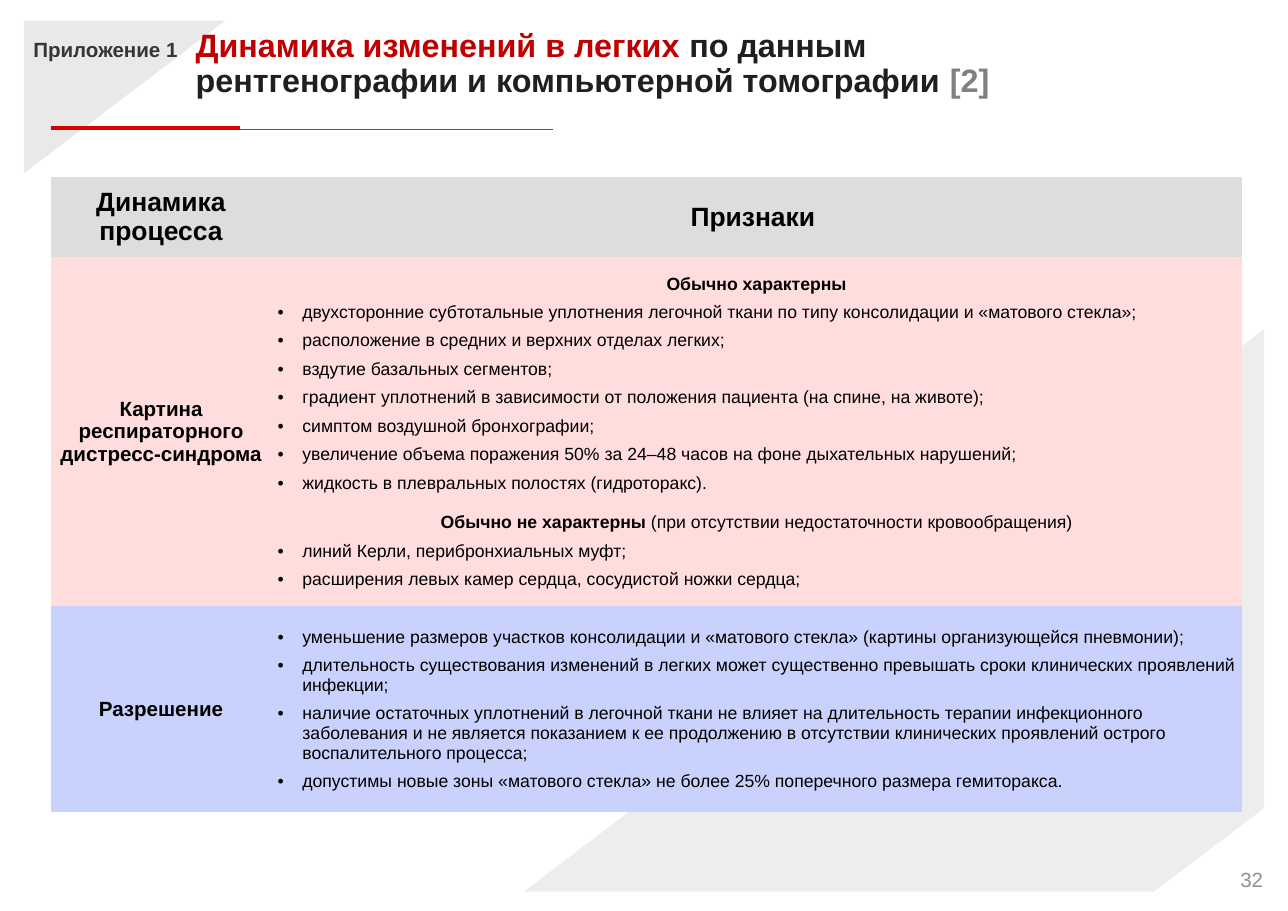
from lxml import etree
from pptx import Presentation
from pptx.dml.color import RGBColor
from pptx.enum.shapes import MSO_CONNECTOR, MSO_SHAPE
from pptx.enum.text import MSO_ANCHOR, PP_ALIGN
from pptx.oxml.ns import qn
from pptx.util import Inches, Pt

LEFT, CENTER, RIGHT = PP_ALIGN.LEFT, PP_ALIGN.CENTER, PP_ALIGN.RIGHT
MIDDLE = MSO_ANCHOR.MIDDLE
TRIANGLE = MSO_SHAPE.RIGHT_TRIANGLE
STRAIGHT = MSO_CONNECTOR.STRAIGHT
FONT = "Arial"
NO_GRID_STYLE = "{2D5ABB26-0587-4C30-8999-92F81FD0307C}"
# A4 landscape at 150 dots per inch, one point per dot
SLIDE_WIDTH, SLIDE_HEIGHT = Pt(1754), Pt(1241)

COLORS = {
    "white": "FFFFFF", "corner": "E9E9E9", "wedge": "EDEDED",
    "rule": "575757", "accent": "D30102", "number": "8F8F8F",
    "label": "353535", "title": "1F1F1F", "title_red": "C00000",
    "reference": "808080", "black": "000000",
    "header": "DDDDDD", "distress": "FFDDDD", "resolution": "C9D2FD",
}

# left, top, width, height, rotation, colour
TRIANGLES = [
    (11.59, 4.55, 10.64, 14, 270, "wedge"),
    (0.91, -0.07, 2.89, 3.81, 90, "corner"),
    (21.77, 14.6, 2.23, 2.94, 270, "white"),
]
# right end, y, width in points, colour
RULES_LEFT = 0.96
RULES = [(10.46, 2.45, 1.5, "rule"), (4.53, 2.42, 5.75, "accent")]

APPENDIX = "Приложение 1"
PAGE_NUMBER = "32"
TITLE_LINES = [
    [("Динамика изменений в легких ", "title_red"), ("по данным ", "title")],
    [("рентгенографии и компьютерной томографии ", "title"), ("[2]", "reference")],
]

HEADINGS = ["Динамика процесса", "Признаки "]
# Each stage: name, colour, groups of (bold heading, plain ending, signs)
STAGES = [
    ("Картина респираторного дистресс-синдрома", "distress", [
        ("Обычно характерны", "", [
            "двухсторонние субтотальные уплотнения легочной ткани по типу консолидации и «матового стекла»;",
            "расположение в средних и верхних отделах легких;",
            "вздутие базальных сегментов;",
            "градиент уплотнений в зависимости от положения пациента (на спине, на животе);",
            "симптом воздушной бронхографии;",
            "увеличение объема поражения 50% за 24–48 часов на фоне дыхательных нарушений;",
            "жидкость в плевральных полостях (гидроторакс).",
        ]),
        ("Обычно не характерны", " (при отсутствии недостаточности кровообращения)", [
            "линий Керли, перибронхиальных муфт;",
            "расширения левых камер сердца, сосудистой ножки сердца;",
        ]),
    ]),
    ("Разрешение", "resolution", [
        ("", "", [
            "уменьшение размеров участков консолидации и «матового стекла» (картины организующейся пневмонии);",
            "длительность существования изменений в легких может существенно превышать сроки клинических проявлений инфекции;",
            "наличие остаточных уплотнений в легочной ткани не влияет на длительность терапии инфекционного заболевания и не является показанием к ее продолжению в отсутствии клинических проявлений острого воспалительного процесса;",
            "допустимы новые зоны «матового стекла» не более 25% поперечного размера гемиторакса.",
        ]),
    ]),
]
TABLE_LEFT, TABLE_TOP = 0.96, 3.34
COLUMN_WIDTHS = [4.17, 18.36]
ROW_HEIGHTS = [1.53, 6.6, 3.9]
BULLET_INDENT = 0.47
SIGN_GAP, GROUP_GAP = 12, 27.5


def rgb(color):
    return RGBColor.from_string(COLORS[color])


def add_run(paragraph, text, size, color="black", bold=False):
    run = paragraph.add_run()
    run.text = text
    run.font.name, run.font.size, run.font.bold = FONT, Pt(size), bold
    run.font.color.rgb = rgb(color)


def add_text_area(slide, left, top, width, height):
    """Add a text box without margins and return its first paragraph."""
    frame = slide.shapes.add_textbox(*map(Inches, (left, top, width, height))).text_frame
    frame.word_wrap = True
    frame.margin_left = frame.margin_right = frame.margin_top = frame.margin_bottom = 0
    return frame.paragraphs[0]


def add_bullet(paragraph):
    properties = paragraph._p.get_or_add_pPr()
    properties.set("marL", str(Inches(BULLET_INDENT)))
    properties.set("indent", str(-Inches(BULLET_INDENT)))
    etree.SubElement(properties, qn("a:buFont")).set("typeface", FONT)
    etree.SubElement(properties, qn("a:buChar")).set("char", "•")


def prepare_cell(cell, color):
    cell.fill.solid()
    cell.fill.fore_color.rgb = rgb(color)
    cell.vertical_anchor = MIDDLE
    cell.margin_left = cell.margin_right = Inches(0.12)
    cell.margin_top = cell.margin_bottom = Inches(0.16)


def fill_label(cell, text, size, color):
    prepare_cell(cell, color)
    paragraph = cell.text_frame.paragraphs[0]
    paragraph.alignment = CENTER
    add_run(paragraph, text, size, bold=True)


def fill_signs(cell, groups, color):
    prepare_cell(cell, color)
    frame = cell.text_frame
    lines = []
    for heading, ending, signs in groups:
        if heading:
            lines.append((heading, ending, GROUP_GAP))
        lines += [("", sign, SIGN_GAP) for sign in signs]
    for index, (heading, plain, gap) in enumerate(lines):
        paragraph = frame.add_paragraph() if index else frame.paragraphs[0]
        paragraph.space_before = Pt(gap if index else 0)
        paragraph.alignment = CENTER if heading else LEFT
        if heading:
            add_run(paragraph, heading, 24, bold=True)
        else:
            add_bullet(paragraph)
        if plain:
            add_run(paragraph, plain, 24)


def add_decor(slide):
    for left, top, width, height, rotation, color in TRIANGLES:
        triangle = slide.shapes.add_shape(TRIANGLE, *map(Inches, (left, top, width, height)))
        triangle.rotation = rotation
        triangle.shadow.inherit = False
        triangle.fill.solid()
        triangle.fill.fore_color.rgb = rgb(color)
        triangle.line.fill.background()
    for right, y, weight, color in RULES:
        rule = slide.shapes.add_connector(STRAIGHT, *map(Inches, (RULES_LEFT, y, right, y)))
        rule.line.color.rgb = rgb(color)
        rule.line.width = Pt(weight)
        etree.SubElement(rule._element.spPr, qn("a:effectLst"))


def add_signs_table(slide):
    table = slide.shapes.add_table(
        len(ROW_HEIGHTS), len(COLUMN_WIDTHS), Inches(TABLE_LEFT), Inches(TABLE_TOP),
        Inches(sum(COLUMN_WIDTHS)), Inches(sum(ROW_HEIGHTS))).table
    table._tbl.tblPr.find(qn("a:tableStyleId")).text = NO_GRID_STYLE
    table.horz_banding = False
    for column, width in zip(table.columns, COLUMN_WIDTHS):
        column.width = Inches(width)
    for row, height in zip(table.rows, ROW_HEIGHTS):
        row.height = Inches(height)
    for column, heading in enumerate(HEADINGS):
        fill_label(table.cell(0, column), heading, 36, "header")
    for row, (stage, color, groups) in enumerate(STAGES, start=1):
        fill_label(table.cell(row, 0), stage, 28, color)
        fill_signs(table.cell(row, 1), groups, color)


def add_titles(slide):
    appendix = add_text_area(slide, 0.63, 0.76, 3.02, 0.43)
    appendix.line_spacing = 0.9
    add_run(appendix, APPENDIX, 28, "label", bold=True)

    title = add_text_area(slide, 3.7, 0.56, 18.05, 1.33)
    title.line_spacing = 0.9
    for index, line in enumerate(TITLE_LINES):
        if index:
            title.add_line_break()
        for text, color in line:
            add_run(title, text, 44, color, bold=True)

    number = add_text_area(slide, 22.89, 16.4, 1, 0.47)
    number.alignment = RIGHT
    add_run(number, PAGE_NUMBER, 28, "number")


def main():
    deck = Presentation()
    deck.slide_width, deck.slide_height = SLIDE_WIDTH, SLIDE_HEIGHT
    slide = deck.slides.add_slide(deck.slide_layouts[6])
    add_decor(slide)
    add_signs_table(slide)
    add_titles(slide)
    deck.save("out.pptx")


if __name__ == "__main__":
    main()
